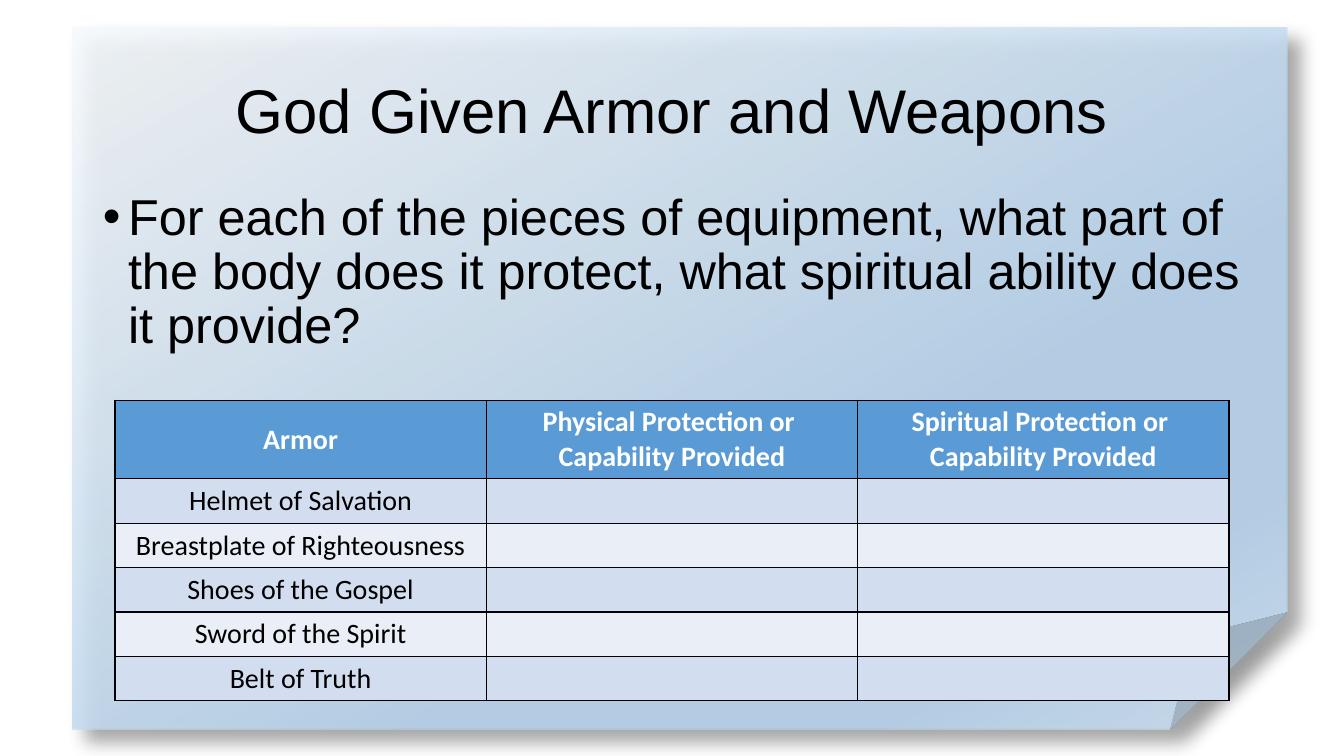
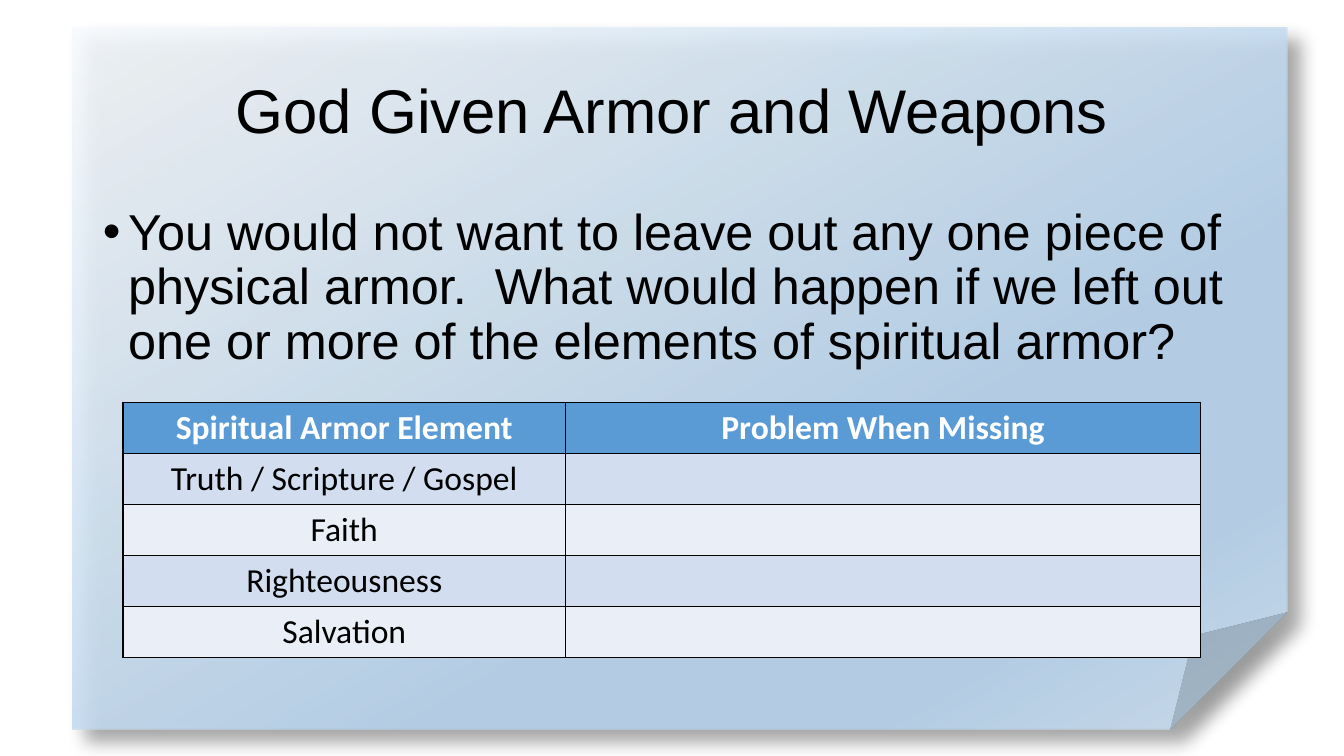
from lxml import etree
from pptx import Presentation
from pptx.dml.color import RGBColor
from pptx.enum.shapes import MSO_SHAPE
from pptx.enum.text import MSO_ANCHOR, MSO_AUTO_SIZE, PP_ALIGN
from pptx.oxml import parse_xml
from pptx.oxml.ns import qn
from pptx.util import Inches, Pt

FOLDED_CORNER = MSO_SHAPE.FOLDED_CORNER
MIDDLE, TOP = MSO_ANCHOR.MIDDLE, MSO_ANCHOR.TOP
CENTER, LEFT = PP_ALIGN.CENTER, PP_ALIGN.LEFT
NO_AUTOFIT = MSO_AUTO_SIZE.NONE

BLACK = RGBColor(0x00, 0x00, 0x00)
WHITE = RGBColor(0xFF, 0xFF, 0xFF)
HEADER_BLUE = RGBColor(0x5B, 0x9B, 0xD5)
BAND_COLORS = (RGBColor(0xD2, 0xDE, 0xEF), RGBColor(0xEA, 0xEF, 0xF7))
PAPER_PALE = RGBColor(0xF7, 0xFA, 0xFD)
PAPER_BLUE = RGBColor(0xB5, 0xD2, 0xEC)
PAPER_LIGHT = RGBColor(0xCE, 0xE1, 0xF2)
PAPER_STOPS = ((0, PAPER_PALE), (64, PAPER_BLUE), (83, PAPER_BLUE), (100, PAPER_LIGHT))

SLIDE_WIDTH, SLIDE_HEIGHT = Inches(13.33), Inches(7.5)
DRAWING_NS = "http://schemas.openxmlformats.org/drawingml/2006/main"

# Shares of the slide, in percent
TEXT_LEFT, TEXT_WIDTH = 6.9, 86.25
TITLE_TOP, TITLE_HEIGHT = 5.33, 19.33
BODY_BOTTOM = 90.13

TITLE = "God Given Armor and Weapons"


def across(percent):
    return round(SLIDE_WIDTH * percent / 100)


def down(percent):
    return round(SLIDE_HEIGHT * percent / 100)


def place(shape, left, top, width, height):
    shape.left, shape.top = across(left), down(top)
    shape.width, shape.height = across(width), down(height)


def style_font(para, name, size, color, bold=False):
    font = para.font
    font.name, font.size, font.bold = name, Pt(size), bold
    font.color.rgb = color


def add_paper(layout, page):
    """Draw the folded sheet and move it to the layout, behind every slide."""
    paper = page.shapes.add_shape(FOLDED_CORNER, across(5.4), down(3.6), across(90.38), down(92.93))
    paper.line.fill.background()
    stops = "".join(
        f'<a:gs pos="{share * 1000}"><a:srgbClr val="{color}"><a:alpha val="87000"/></a:srgbClr></a:gs>'
        for share, color in PAPER_STOPS)
    gradient = parse_xml(
        f'<a:gradFill xmlns:a="{DRAWING_NS}" rotWithShape="1"><a:gsLst>{stops}</a:gsLst>'
        '<a:lin ang="3600000" scaled="0"/></a:gradFill>')
    shadow = parse_xml(
        f'<a:effectLst xmlns:a="{DRAWING_NS}">'
        f'<a:outerShdw blurRad="{Pt(13)}" dist="{Pt(13)}" dir="2700000" algn="tl" rotWithShape="0">'
        f'<a:srgbClr val="{BLACK}"><a:alpha val="40000"/></a:srgbClr></a:outerShdw></a:effectLst>')
    properties = paper.element.spPr
    properties.find(qn("a:prstGeom")).addnext(gradient)
    properties.append(shadow)
    layout.shapes.element.insert(2, paper.element)


def fill_placeholder(box, text, size, align, anchor):
    frame = box.text_frame
    frame.text = text
    frame.word_wrap = True
    frame.auto_size = NO_AUTOFIT
    frame.vertical_anchor = anchor
    para = frame.paragraphs[0]
    para.alignment = align
    para.line_spacing = 0.9
    para.space_before = Pt(0)
    return para


def add_title(page):
    box = page.shapes.title
    place(box, TEXT_LEFT, TITLE_TOP, TEXT_WIDTH, TITLE_HEIGHT)
    para = fill_placeholder(box, TITLE, 44, CENTER, MIDDLE)
    style_font(para, "Arial", 44, BLACK)


def add_question(page, text, top):
    box = page.placeholders[1]
    place(box, TEXT_LEFT, top, TEXT_WIDTH, BODY_BOTTOM - top)
    para = fill_placeholder(box, text, 36, LEFT, TOP)
    properties = para._p.get_or_add_pPr()
    properties.set("marL", str(Inches(0.25)))
    properties.set("indent", str(-Inches(0.25)))
    etree.SubElement(properties, qn("a:buChar"), char="•")
    style_font(para, "Arial", 36, BLACK)


def add_borders(cell):
    properties = cell._tc.get_or_add_tcPr()
    for index, side in enumerate(("lnL", "lnR", "lnT", "lnB")):
        properties.insert(index, parse_xml(
            f'<a:{side} xmlns:a="{DRAWING_NS}" w="{Pt(1)}"><a:solidFill>'
            f'<a:srgbClr val="{BLACK}"/></a:solidFill></a:{side}>'))


def style_cell(cell, text, size, fill, color, bold):
    cell.fill.solid()
    cell.fill.fore_color.rgb = fill
    cell.vertical_anchor = MIDDLE
    add_borders(cell)
    para = cell.text_frame.paragraphs[0]
    para.text = text
    para.alignment = CENTER
    style_font(para, "Calibri", size, color, bold)


def add_worksheet(page, left, top, columns, headers, elements, size, header_height, row_height):
    """Add a table with named elements in its first column and blanks to fill in."""
    heights = [header_height] + [row_height] * len(elements)
    table = page.shapes.add_table(
        len(heights), len(columns), across(left), down(top),
        across(sum(columns)), down(sum(heights))).table
    for column, width in zip(table.columns, columns):
        column.width = across(width)
    for row, height in zip(table.rows, heights):
        row.height = down(height)
    for cell, header in zip(table.rows[0].cells, headers):
        style_cell(cell, header, size, HEADER_BLUE, WHITE, True)
    blanks = [""] * (len(columns) - 1)
    for number, element in enumerate(elements):
        band = BAND_COLORS[number % 2]
        for cell, text in zip(table.rows[number + 1].cells, [element] + blanks):
            style_cell(cell, text, size, band, BLACK, False)


def add_page(deck, layout, question, question_top):
    page = deck.slides.add_slide(layout)
    add_title(page)
    add_question(page, question, question_top)
    return page


def main():
    deck = Presentation()
    deck.slide_width, deck.slide_height = SLIDE_WIDTH, SLIDE_HEIGHT
    layout = deck.slide_layouts[1]

    equipment = add_page(
        deck, layout,
        "For each of the pieces of equipment, what part of the body does it protect, "
        "what spiritual ability does it provide?", 24.67)
    add_paper(layout, equipment)
    add_worksheet(
        equipment, 8.55, 52.93, [27.63] * 3,
        ["Armor", "Physical Protection or \vCapability Provided",
         "Spiritual Protection or \vCapability Provided"],
        ["Helmet of Salvation", "Breastplate of Righteousness", "Shoes of the Gospel",
         "Sword of the Spirit", "Belt of Truth"],
        size=20, header_height=10.27, row_height=5.87)

    missing = add_page(
        deck, layout,
        "You would not want to leave out any one piece of physical armor.  What would happen "
        "if we left out one or more of the elements of spiritual armor?", 26.67)
    add_worksheet(
        missing, 9.15, 53.2, [32.93, 47.25],
        ["Spiritual Armor Element", "Problem When Missing"],
        ["Truth / Scripture / Gospel", "Faith", "Righteousness", "Salvation"],
        size=24, header_height=6.75, row_height=6.75)

    deck.save("out.pptx")


if __name__ == "__main__":
    main()
